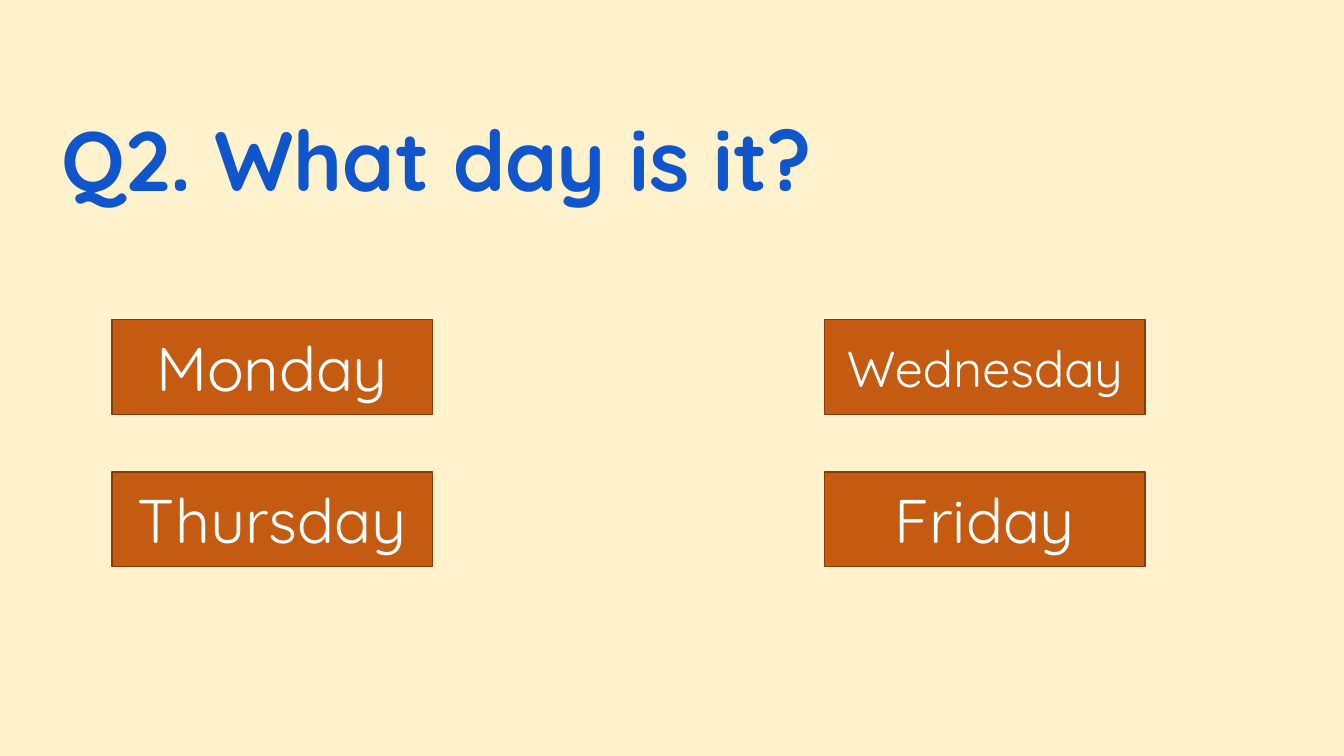
from pptx import Presentation
from pptx import util as u
from pptx.dml.color import RGBColor
from pptx.enum import shapes, text

CREAM = RGBColor(0xFF, 0xF2, 0xCC)
BLUE = RGBColor(0x11, 0x55, 0xCC)
RUST = RGBColor(0xC5, 0x5A, 0x11)
BROWN = RGBColor(0x84, 0x3C, 0x0B)
WHITE = RGBColor(0xFF, 0xFF, 0xFF)


def write(frame, words, size, color, bold, align, anchor):
    frame.word_wrap = True
    frame.vertical_anchor = anchor
    para = frame.paragraphs[0]
    para.alignment = align
    para.line_spacing = 1.0
    run = para.add_run()
    run.text = words
    font = run.font
    font.name = "Quicksand"
    font.size = u.Pt(size)
    font.bold = bold
    font.color.rgb = color


deck = Presentation()
deck.slide_width = u.Cm(33.87)
deck.slide_height = u.Cm(19.05)
slide = deck.slides.add_slide(deck.slide_layouts[5])
slide.background.fill.solid()
slide.background.fill.fore_color.rgb = CREAM

title = slide.shapes.title
title.left, title.top = u.Cm(1.3), u.Cm(2.57)
title.width, title.height = u.Cm(29.95), u.Cm(2.82)
title.text_frame.auto_size = text.MSO_AUTO_SIZE.NONE
write(title.text_frame, "Q2. What day is it?", 60, BLUE, True,
      text.PP_ALIGN.LEFT, text.MSO_ANCHOR.TOP)

days = [
    [("Monday", 44), ("Wednesday", 36)],
    [("Thursday", 44), ("Friday", 44)],
]
for row, pair in enumerate(days):
    for col, (day, size) in enumerate(pair):
        button = slide.shapes.add_shape(
            shapes.MSO_SHAPE.ACTION_BUTTON_CUSTOM,
            u.Cm(2.82 + 17.96 * col), u.Cm(8.05 + 3.84 * row),
            u.Cm(8.08), u.Cm(2.39))
        button.shadow.inherit = False
        button.fill.solid()
        button.fill.fore_color.rgb = RUST
        button.line.color.rgb = BROWN
        button.line.width = u.Pt(1)
        write(button.text_frame, day, size, WHITE, False,
              text.PP_ALIGN.CENTER, text.MSO_ANCHOR.MIDDLE)

deck.save("out.pptx")
